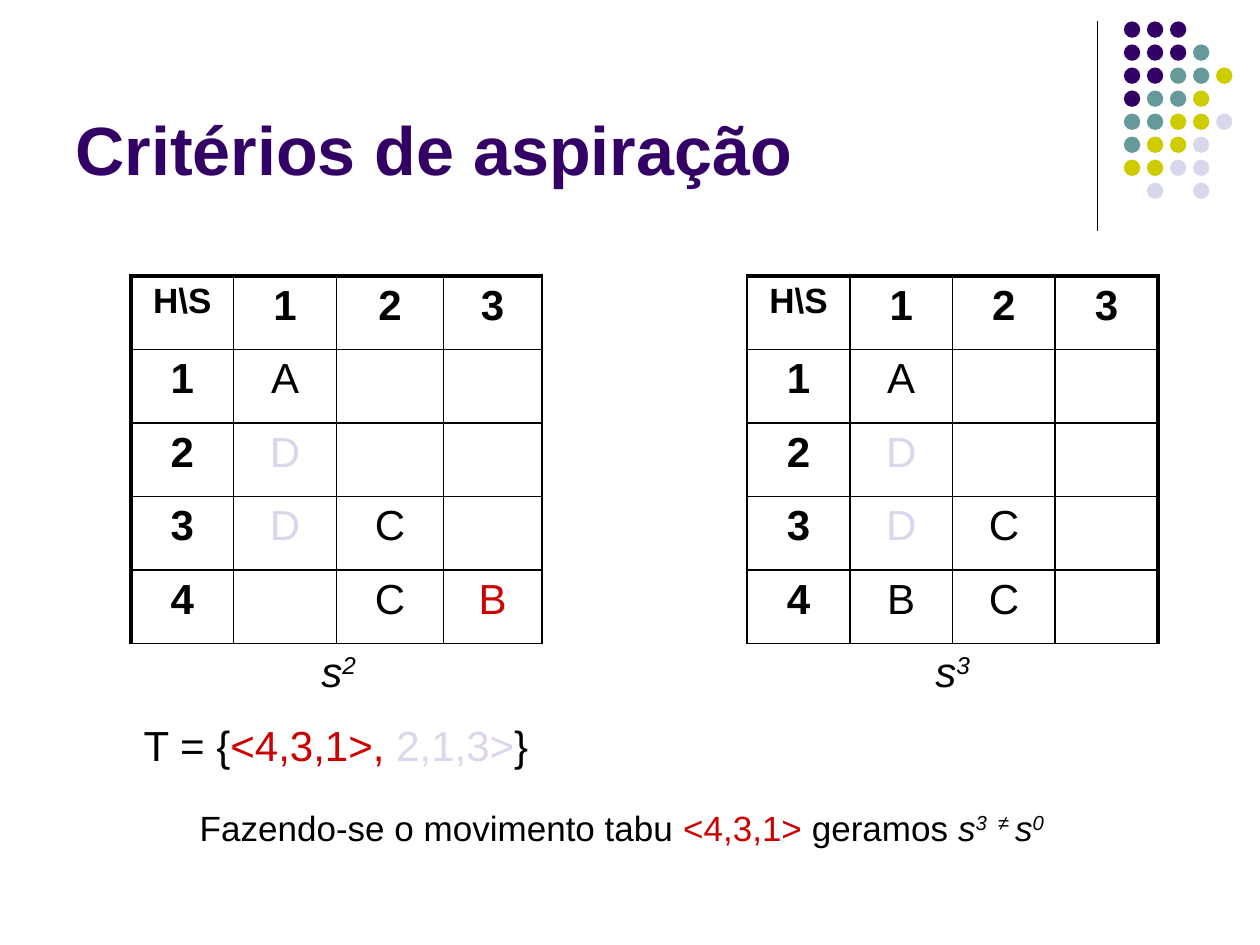
from dataclasses import dataclass, field

from lxml.etree import SubElement
from pptx import Presentation
from pptx.dml.color import RGBColor as RGB
from pptx.enum.shapes import MSO_CONNECTOR as Connector, MSO_SHAPE as Shape
from pptx.enum.text import MSO_ANCHOR as Anchor, PP_ALIGN as Align
from pptx.oxml.ns import qn
from pptx.util import Inches, Pt


@dataclass(frozen=True)
class Theme:
    font: str = "Arial"
    purple: str = "330066"
    teal: str = "669999"
    lime: str = "CCCC00"
    pale: str = "D8D8EC"
    red: str = "CC0000"
    black: str = "000000"
    title: int = 39
    body: int = 24
    small: int = 20
    thin: float = 1
    thick: float = 2.25


T = Theme()


@dataclass(frozen=True)
class Run:
    text: str
    size: int = T.body
    color: str = T.black
    bold: bool = False
    italic: bool = False
    raised: bool = False


@dataclass(frozen=True)
class Board:
    """Schedule of machines by period, starting at a table column."""
    column: int
    rows: tuple[str, ...]
    label: str
    colors: dict[str, str] = field(default_factory=dict)


BOARDS = (
    Board(0, ("A  ", "D  ", "DC ", " CB"), "2", {"D": T.pale, "B": T.red}),
    Board(6, ("A  ", "D  ", "DC ", "BC "), "3", {"D": T.pale}),
)
HEADINGS = ("H\\S", "1", "2", "3")
BOARD_ROWS, BOARD_COLS = 5, len(HEADINGS)
LABEL_ROW, TABU_ROW = 5, 6
COL, ROW = 8.15 / 10, 3.5 / 6
COL_WIDTHS = [COL] * 2 + [0.85, 0.78] + [COL] * 6
ROW_HEIGHTS = [ROW] * 6 + [0.66]

DOT_COLORS = {"P": T.purple, "T": T.teal, "Y": T.lime, "L": T.pale}
DOTS = ("PPP", "PPPT", "PPTTY", "PTTY", "TTYYL", "TYYL", "YYLL", " L L")
DOT_SIZE, DOT_PITCH = 0.13, 1.28 / 7


def write(tf, runs: list[Run], align=Align.LEFT) -> None:
    p = tf.paragraphs[0]
    p.alignment = align
    for run in runs:
        r = p.add_run()
        r.text = run.text
        formats = {"name": T.font, "size": Pt(run.size), "bold": run.bold, "italic": run.italic}
        for name, value in formats.items():
            setattr(r.font, name, value)
        r.font.color.rgb = RGB.from_string(run.color)
        if run.raised:
            r.font._element.set("baseline", "30000")


def add_text(s, box: tuple[float, ...], runs: list[Run], align=Align.LEFT, anchor=Anchor.TOP) -> None:
    tf = s.shapes.add_textbox(*map(Inches, box)).text_frame
    tf.word_wrap = True
    tf.vertical_anchor = anchor
    write(tf, runs, align)


def add_dots(s, left: float, top: float) -> None:
    group = s.shapes.add_group_shape()
    for row, line in enumerate(DOTS):
        for col, key in enumerate(line):
            if key == " ":
                continue
            x, y = left + col * DOT_PITCH, top + row * DOT_PITCH
            sp = group.shapes.add_shape(Shape.OVAL, *map(Inches, (x, y, DOT_SIZE, DOT_SIZE)))
            sp.shadow.inherit = False
            sp.fill.solid()
            sp.fill.fore_color.rgb = RGB.from_string(DOT_COLORS[key])
            sp.line.fill.background()


def add_divider(s, x: float, top: float, bottom: float) -> None:
    line = s.shapes.add_connector(Connector.STRAIGHT, *map(Inches, (x, top, x, bottom)))
    line.line.width = Pt(0.75)
    line.line.color.rgb = RGB.from_string(T.black)
    SubElement(line._element.spPr, qn("a:effectLst"))


def in_board(row: int, col: int) -> bool:
    return 0 <= row < BOARD_ROWS and any(b.column <= col < b.column + BOARD_COLS for b in BOARDS)


def set_borders(cell, row: int, col: int) -> None:
    """Rule every edge that touches a board; the outer left, top and right edges are thick."""
    inside = in_board(row, col)
    edges = (
        ("a:lnL", (row, col - 1), col == 0),
        ("a:lnR", (row, col + 1), col == len(COL_WIDTHS) - 1),
        ("a:lnT", (row - 1, col), row == 0),
        ("a:lnB", (row + 1, col), False),
    )
    tc_pr = cell._tc.get_or_add_tcPr()
    for index, (tag, neighbour, outer) in enumerate(edges):
        ln = tc_pr.makeelement(qn(tag), {})
        tc_pr.insert(index, ln)
        if inside or in_board(*neighbour):
            ln.set("w", str(Pt(T.thick if inside and outer else T.thin)))
            SubElement(SubElement(ln, qn("a:solidFill")), qn("a:srgbClr")).set("val", T.black)
        else:
            SubElement(ln, qn("a:noFill"))


def fill_board(table, board: Board) -> None:
    def put(row: int, col: int, *runs: Run) -> None:
        write(table.cell(row, board.column + col).text_frame, list(runs), Align.CENTER)

    for col, text in enumerate(HEADINGS):
        put(0, col, Run(text, T.body if col else T.small, bold=True))
    for row, jobs in enumerate(board.rows, 1):
        put(row, 0, Run(str(row), bold=True))
        for col, job in enumerate(jobs, 1):
            if job != " ":
                put(row, col, Run(job, color=board.colors.get(job, T.black)))
    label = table.cell(LABEL_ROW, board.column + 1)
    label.merge(table.cell(LABEL_ROW, board.column + 2))
    put(LABEL_ROW, 1, Run("s", italic=True), Run(board.label, italic=True, raised=True))
    table.cell(TABU_ROW, board.column).merge(table.cell(TABU_ROW, board.column + BOARD_COLS - 1))


def add_boards(s, left: float, top: float) -> None:
    box = (left, top, sum(COL_WIDTHS), sum(ROW_HEIGHTS))
    table = s.shapes.add_table(len(ROW_HEIGHTS), len(COL_WIDTHS), *map(Inches, box)).table
    table.first_row = table.horz_banding = False
    for column, width in zip(table.columns, COL_WIDTHS):
        column.width = Inches(width)
    for row, height in zip(table.rows, ROW_HEIGHTS):
        row.height = Inches(height)
    for row in range(len(ROW_HEIGHTS)):
        for col in range(len(COL_WIDTHS)):
            cell = table.cell(row, col)
            cell.fill.background()
            set_borders(cell, row, col)
    for board in BOARDS:
        fill_board(table, board)
    tabu_list = [Run("T = {"), Run("<4,3,1>, ", color=T.red), Run("2,1,3>", color=T.pale), Run("}")]
    write(table.cell(TABU_ROW, 0).text_frame, tabu_list)


def main() -> None:
    prs = Presentation()
    prs.slide_width, prs.slide_height = Inches(10), Inches(7.5)
    s = prs.slides.add_slide(prs.slide_layouts[6])
    add_divider(s, 8.71, 0.17, 1.83)
    add_dots(s, 8.92, 0.17)
    title = [Run("Critérios de aspiração", T.title, T.purple, bold=True)]
    add_text(s, (0.5, 0.13, 8.25, 1.42), title, anchor=Anchor.BOTTOM)
    add_boards(s, 1.04, 2.19)
    conclusion = [
        Run("Fazendo-se o movimento tabu ", T.small),
        Run("<4,3,1>", T.small, T.red),
        Run(" geramos ", T.small),
        Run("s", T.small, italic=True),
        Run("3  ≠ ", T.small, italic=True, raised=True),
        Run("s", T.small, italic=True),
        Run("0", T.small, italic=True, raised=True),
    ]
    add_text(s, (1.06, 6.35, 7.75, 0.43), conclusion, Align.CENTER)
    prs.save("out.pptx")


if __name__ == "__main__":
    main()
